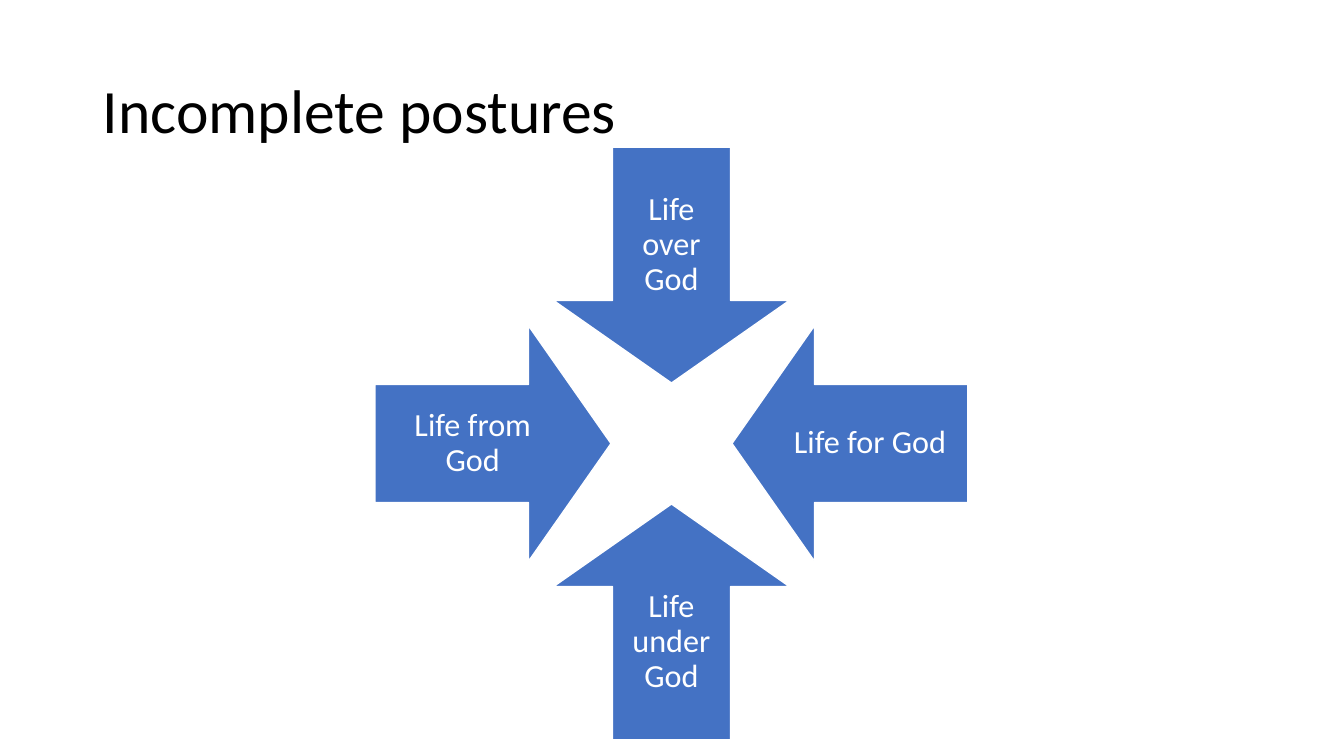
import pptx
import pptx.util
import pptx.dml.color
import pptx.enum.shapes
import pptx.enum.text

Inches = pptx.util.Inches
Pt = pptx.util.Pt
ALIGN = pptx.enum.text.PP_ALIGN
COLORS = {"title": "000000", "arrow": "4472C4", "white": "FFFFFF"}


def rgb(name):
    return pptx.dml.color.RGBColor.from_string(COLORS[name])


def write(tf, text, size, color, align):
    tf.word_wrap = True
    tf.auto_size = pptx.enum.text.MSO_AUTO_SIZE.NONE
    tf.vertical_anchor = pptx.enum.text.MSO_ANCHOR.MIDDLE
    tf.text = text
    p = tf.paragraphs[0]
    p.alignment = align
    p.line_spacing = 0.9
    font = p.runs[0].font
    font.name = "Calibri"
    font.size = Pt(size)
    font.color.rgb = rgb(color)


prs = pptx.Presentation()
prs.slide_width = Inches(13.33)
prs.slide_height = Inches(7.5)
s = prs.slides.add_slide(prs.slide_layouts[5])
s.background.fill.solid()
s.background.fill.fore_color.rgb = rgb("white")

title = s.shapes.title
title.left, title.top = Inches(0.92), Inches(0.4)
title.width, title.height = Inches(11.5), Inches(1.45)
write(title.text_frame, "Incomplete postures", 44, "title", ALIGN.LEFT)

center_x, center_y = 6.66, 4.4
arrow_size, arrow_offset = 2.34, 1.77
label_length, label_breadth, label_offset = 1.93, 1.17, 1.97
postures = [
    ("Life over God", 0, -1),
    ("Life for God", 1, 0),
    ("Life under God", 0, 1),
    ("Life from God", -1, 0),
]

for i, (text, dx, dy) in enumerate(postures):
    arrow = s.shapes.add_shape(
        pptx.enum.shapes.MSO_SHAPE.DOWN_ARROW,
        Inches(center_x + dx * arrow_offset - arrow_size / 2),
        Inches(center_y + dy * arrow_offset - arrow_size / 2),
        Inches(arrow_size), Inches(arrow_size))
    arrow.rotation = 90 * i
    arrow.adjustments[0] = 0.5
    arrow.adjustments[1] = 0.35
    arrow.shadow.inherit = False
    arrow.fill.solid()
    arrow.fill.fore_color.rgb = rgb("arrow")
    arrow.line.color.rgb = rgb("white")
    arrow.line.width = Pt(1)

    w, h = (label_length, label_breadth) if dx else (label_breadth, label_length)
    label = s.shapes.add_textbox(
        Inches(center_x + dx * label_offset - w / 2),
        Inches(center_y + dy * label_offset - h / 2),
        Inches(w), Inches(h))
    tf = label.text_frame
    tf.margin_left = tf.margin_right = Inches(0.18)
    tf.margin_top = tf.margin_bottom = Inches(0.18)
    write(tf, text, 23, "white", ALIGN.CENTER)

prs.save("out.pptx")
